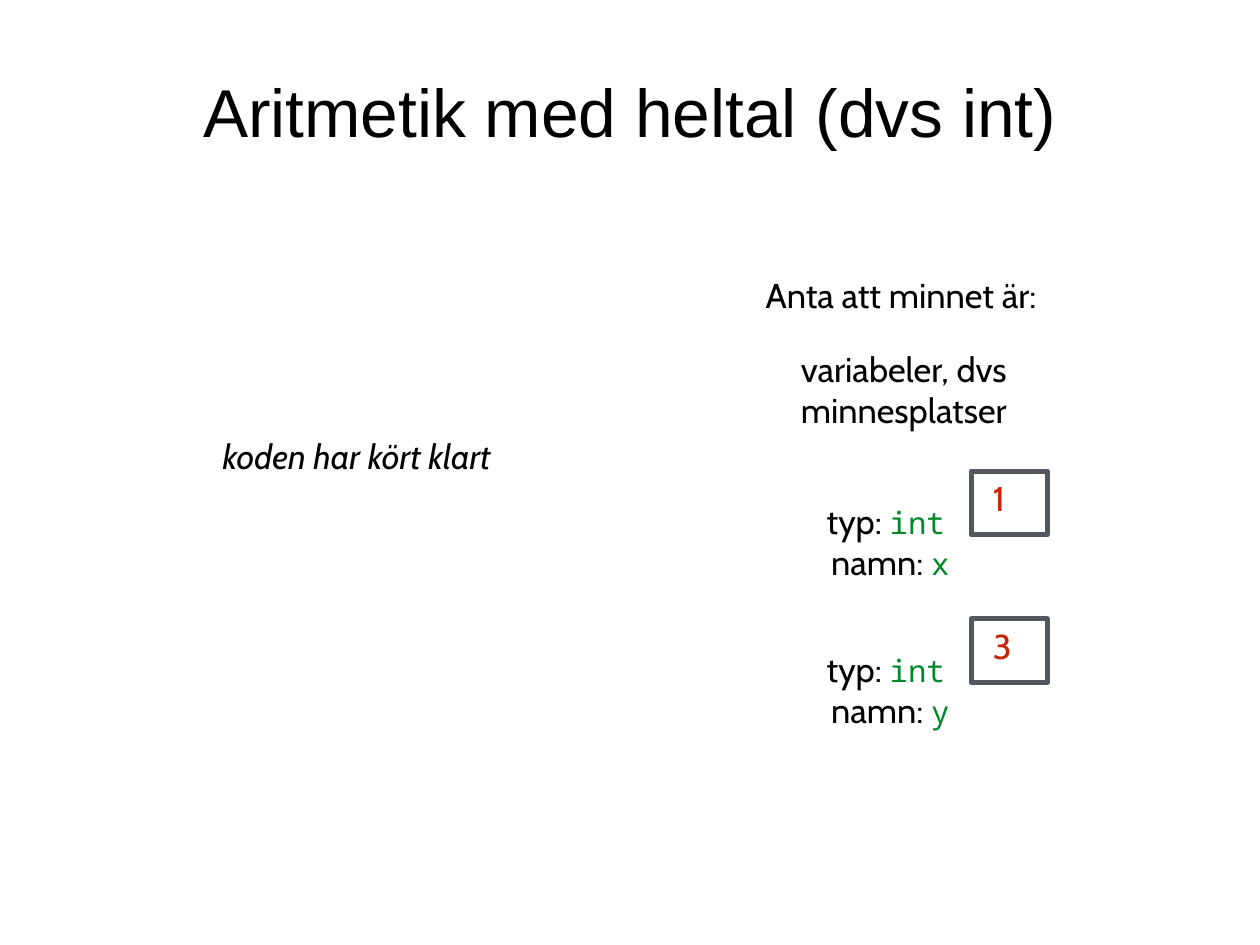
from pptx import Presentation
from pptx.dml.color import RGBColor
from pptx.enum.shapes import MSO_SHAPE as Shape
from pptx.enum.text import MSO_ANCHOR as Anchor, PP_ALIGN as Align
from pptx.util import Cm, Pt


def color(hex_code):
    return RGBColor.from_string(hex_code)


def add_text(shapes, left, top, width, height, lines, font="Cabin", size=28, ink="000000"):
    box = shapes.add_textbox(Cm(left), Cm(top), Cm(width), Cm(height))
    frame = box.text_frame
    frame.word_wrap = True
    frame.margin_left = frame.margin_right = frame.margin_top = frame.margin_bottom = 0
    frame.text = lines
    for paragraph in frame.paragraphs:
        for run in paragraph.runs:
            run.font.name = font
            run.font.size = Pt(size)
            run.font.color.rgb = color(ink)
    return frame


prs = Presentation()
prs.slide_width = Cm(36.12)
prs.slide_height = Cm(27.1)
slide = prs.slides.add_slide(prs.slide_layouts[6])

title = add_text(slide.shapes, 0.18, 0.18, 35.76, 6, "Aritmetik med heltal (dvs int)", "Arial", 55)
title.vertical_anchor = Anchor.MIDDLE
title.paragraphs[0].alignment = Align.CENTER

add_text(slide.shapes, 21.95, 7.87, 13, 1.42, "Anta att minnet är:")
add_text(slide.shapes, 22.96, 9.98, 8.97, 2.54, "variabeler, dvs\nminnesplatser")

for row, (name, value) in enumerate([("x", "1"), ("y", "3")]):
    top = 13.51 + row * 4.24
    variable = slide.shapes.add_group_shape().shapes

    cell = variable.add_shape(Shape.RECTANGLE, Cm(27.84), Cm(top), Cm(2.18), Cm(1.83))
    cell.shadow.inherit = False
    cell.fill.background()
    cell.line.color.rgb = color("53585F")
    cell.line.width = Pt(4)

    for left, offset, label, code in [(23.83, 2.01, "namn: ", name), (23.7, 0.84, "typ: ", "int")]:
        caption = add_text(variable, left, top + offset, 4, 1.42, label)
        code_run = caption.paragraphs[0].add_run()
        code_run.text = code
        code_run.font.name = "Noto Sans Mono"
        code_run.font.size = Pt(25)
        code_run.font.color.rgb = color("00882B")

    add_text(variable, 28.46, top + 0.18, 1.4, 1.42, value, ink="C82506")

status = add_text(slide.shapes, 6.38, 12.47, 10.54, 1.37, "koden har kört klart")
status.paragraphs[0].runs[0].font.italic = True

prs.save("out.pptx")
